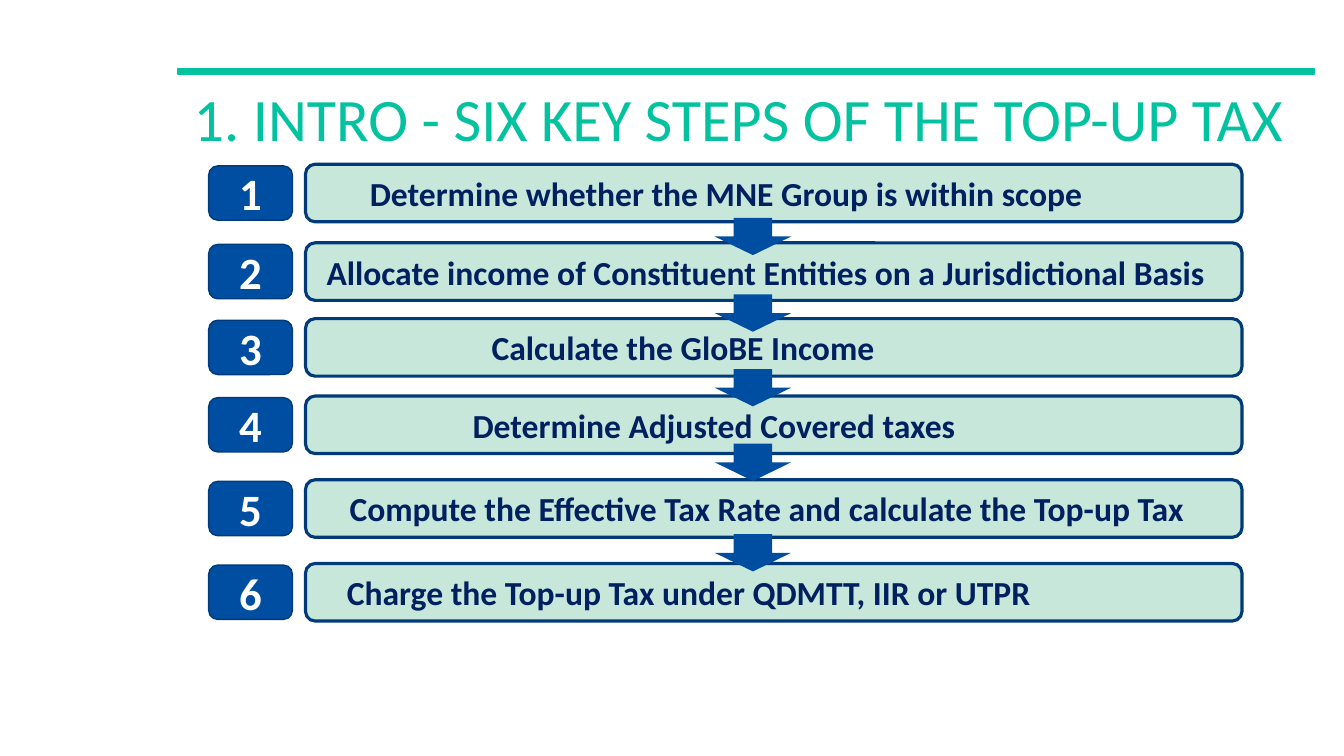
import pptx
import pptx.dml.color
import pptx.enum.shapes
import pptx.enum.text
import pptx.util

Cm = pptx.util.Cm
Pt = pptx.util.Pt
RGBColor = pptx.dml.color.RGBColor
SHAPES = pptx.enum.shapes.MSO_SHAPE
ALIGN = pptx.enum.text.PP_ALIGN
ANCHOR = pptx.enum.text.MSO_ANCHOR

TEAL = RGBColor(0x02, 0xC2, 0x9F)
MINT = RGBColor(0xC8, 0xE7, 0xDB)
BLUE = RGBColor(0x00, 0x4E, 0xA2)
DARK_BLUE = RGBColor(0x00, 0x3A, 0x78)
NAVY = RGBColor(0x00, 0x20, 0x60)
WHITE = RGBColor(0xFF, 0xFF, 0xFF)
FONT = "Calibri"

TITLE = "1. INTRO - SIX KEY STEPS OF THE TOP-UP TAX"
# Centimetres below the first bar's top, text indent in the bar, step wording
STEPS = [
    (0, 1.55, "Determine whether the MNE Group is within scope"),
    (1.98, 0.46, "Allocate income of Constituent Entities on a Jurisdictional Basis"),
    (3.89, 4.62, "Calculate the GloBE Income"),
    (5.84, 4.14, "Determine Adjusted Covered taxes"),
    (7.95, 1.04, "Compute the Effective Tax Rate and calculate the Top-up Tax"),
    (10.06, 0.97, "Charge the Top-up Tax under QDMTT, IIR or UTPR"),
]
ARROW_OFFSETS = [1.35, 3.28, 5.16, 7.04, 9.32]

BADGE_WIDTH, BADGE_HEIGHT = Cm(2.11), Cm(1.37)
BAR_OFFSET, BAR_HEIGHT = Cm(2.44), Cm(1.45)
ARROW_OFFSET, ARROW_WIDTH, ARROW_HEIGHT = Cm(12.75), Cm(1.93), Cm(0.94)


def add_filled_shape(slide, kind, box, fill, line=None, line_width=1):
    shape = slide.shapes.add_shape(kind, *box)
    shape.shadow.inherit = False
    shape.fill.solid()
    shape.fill.fore_color.rgb = fill
    if line is None:
        shape.line.fill.background()
    else:
        shape.line.color.rgb = line
        shape.line.width = Pt(line_width)
    return shape


def write_text(shape, text, size, color, alignment, bold=True, indent=0):
    frame = shape.text_frame
    frame.text = text
    frame.word_wrap = True
    frame.vertical_anchor = ANCHOR.MIDDLE
    frame.margin_left = indent
    frame.margin_right = frame.margin_top = frame.margin_bottom = 0
    paragraph = frame.paragraphs[0]
    paragraph.alignment = alignment
    font = paragraph.runs[0].font
    font.name = FONT
    font.size = Pt(size)
    font.bold = bold
    font.color.rgb = color


def add_header(slide, left, top, width, height):
    title = slide.shapes.title
    title.left, title.top, title.width, title.height = left, top, width, height
    write_text(title, TITLE, 43, TEAL, ALIGN.CENTER, bold=False)
    title.text_frame.auto_size = pptx.enum.text.MSO_AUTO_SIZE.NONE
    title.text_frame.paragraphs[0].line_spacing = 0.9
    rule_box = (left + Cm(0.2), top + Cm(0.48), width, Cm(0.15))
    add_filled_shape(slide, SHAPES.RECTANGLE, rule_box, TEAL, TEAL)


def add_step(slide, left, top, width, number, indent, text):
    """Place a numbered badge and its bar side by side, centred on one line."""
    bar_box = (left + BAR_OFFSET, top, width - BAR_OFFSET, BAR_HEIGHT)
    bar = add_filled_shape(
        slide, SHAPES.ROUNDED_RECTANGLE, bar_box, MINT, DARK_BLUE, 2.25
    )
    write_text(bar, text, 24, NAVY, ALIGN.LEFT, indent=Cm(indent))

    badge_top = top + (BAR_HEIGHT - BADGE_HEIGHT) // 2
    badge_box = (left, badge_top, BADGE_WIDTH, BADGE_HEIGHT)
    badge = add_filled_shape(
        slide, SHAPES.ROUNDED_RECTANGLE, badge_box, BLUE, DARK_BLUE
    )
    write_text(badge, str(number), 32, WHITE, ALIGN.CENTER)


def add_steps(slide, left, top, width):
    for number, (offset, indent, text) in enumerate(STEPS, start=1):
        add_step(slide, left, top + Cm(offset), width, number, indent, text)
    for offset in ARROW_OFFSETS:
        arrow_box = (left + ARROW_OFFSET, top + Cm(offset), ARROW_WIDTH, ARROW_HEIGHT)
        add_filled_shape(slide, SHAPES.DOWN_ARROW, arrow_box, BLUE)


def main():
    presentation = pptx.Presentation()
    presentation.slide_width = Cm(33.87)
    presentation.slide_height = Cm(19.05)
    title_only = presentation.slide_layouts[5]
    slide = presentation.slides.add_slide(title_only)
    add_header(slide, Cm(4.29), Cm(1.24), Cm(28.63), Cm(3.68))
    add_steps(slide, Cm(5.26), Cm(4.14), Cm(26.04))
    presentation.save("out.pptx")


if __name__ == "__main__":
    main()
